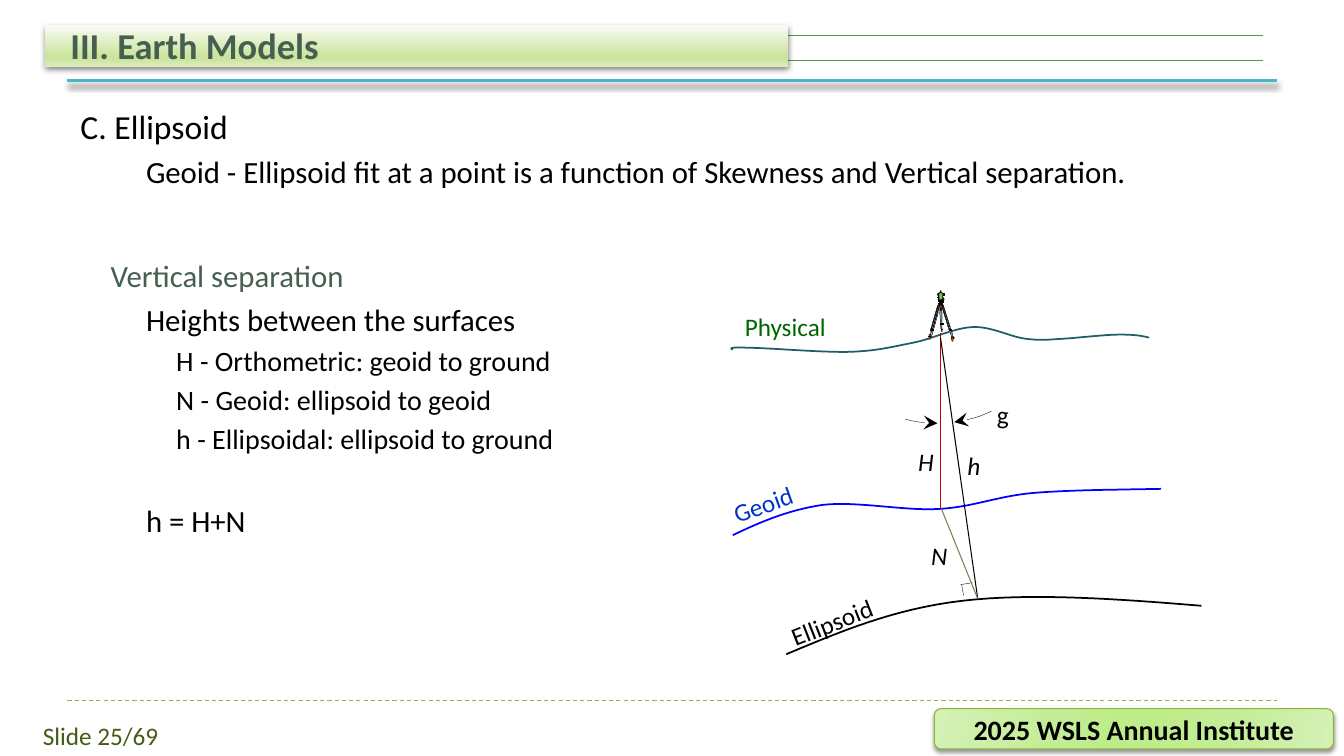
from dataclasses import dataclass

from lxml.etree import SubElement
from pptx import Presentation
from pptx.dml.color import RGBColor
from pptx.enum.dml import MSO_LINE
from pptx.enum.shapes import MSO_CONNECTOR, MSO_SHAPE
from pptx.enum.text import MSO_ANCHOR, PP_ALIGN
from pptx.oxml.ns import qn
from pptx.util import Pt


@dataclass(frozen=True)
class Theme:
    font = "Calibri"
    black, heading, footer = "000000", "455F51", "455C19"
    rule, accent, lime = "549E39", "4AB5C4", "8AB833"
    physical, geoid, ellipsoid = "215D66", "0000FF", "000000"
    physical_label, geoid_label = "006600", "0033CC"
    height, undulation = "C00000", "887952"
    steel = ((0, "717171"), (50, "A1A1A1"), (100, "BFBFBF"))
    orange = ((0, "973C00"), (50, "D75600"), (100, "FF6600"))
    title_bar = ((0, "F9FCF4"), (74, "CCE49E"), (83, "CCE49E"), (100, "DDEDBE"))
    badge = ((0, "D5F1B8"), (30, "C4ED97"), (45, "BEEC8A"),
             (55, "BEEC8A"), (73, "C4ED97"), (100, "D5F1B8"))
    dark, charcoal, gray, silver = "595959", "262626", "808080", "D9D9D9"
    green, bright, rust, knob = "008000", "92D050", "993300", "A6A6A6"
    title_size, topic_size, body_size, detail_size, label_size = 26, 24, 22, 20, 18


THEME = Theme()


def paint(shape, fill=None, line=None, width=0.25, angle=90):
    """Fill with a colour or with gradient stops, and set the outline."""
    shape.shadow.inherit = False
    if fill is None:
        shape.fill.background()
    elif isinstance(fill, str):
        shape.fill.solid()
        shape.fill.fore_color.rgb = RGBColor.from_string(fill)
    else:
        shape.fill.gradient()
        shape.fill.gradient_angle = (360 - angle) % 360
        stops = shape._element.spPr.find(".//" + qn("a:gsLst"))
        for stop in list(stops):
            stops.remove(stop)
        for position, color in fill:
            stop = SubElement(stops, qn("a:gs"), pos=str(position * 1000))
            SubElement(stop, qn("a:srgbClr"), val=color)
    if line:
        shape.line.color.rgb = RGBColor.from_string(line)
        shape.line.width = Pt(width)
    else:
        shape.line.fill.background()


def cast_shadow(shape, alpha, blur, distance):
    effects = shape._element.spPr.find(qn("a:effectLst"))
    shadow = SubElement(effects, qn("a:outerShdw"), blurRad=str(Pt(blur)), dist=str(Pt(distance)),
                        dir="5400000", algn="t", rotWithShape="0")
    color = SubElement(shadow, qn("a:srgbClr"), val=THEME.black)
    SubElement(color, qn("a:alpha"), val=str(alpha * 1000))


def add_preset(shapes, kind, left, top, width, height, rotation=0):
    shape = shapes.add_shape(kind, Pt(left), Pt(top), Pt(width), Pt(height))
    shape.rotation = rotation
    return shape


def add_line(shapes, start, end, color, width=0.75):
    line = shapes.add_connector(MSO_CONNECTOR.STRAIGHT, *map(Pt, start + end))
    line.line.color.rgb = RGBColor.from_string(color)
    line.line.width = Pt(width)
    SubElement(line._element.spPr, qn("a:effectLst"))
    return line


def add_outline(shapes, points, close):
    points = [(Pt(x), Pt(y)) for x, y in points]
    builder = shapes.build_freeform(*points[0])
    builder.add_line_segments(points[1:], close=close)
    return builder.convert_to_shape()


def format_text(para, size, color, bold=False, italic=False):
    for span in para.runs:
        font = span.font
        font.name, font.size, font.bold, font.italic = THEME.font, Pt(size), bold, italic
        font.color.rgb = RGBColor.from_string(color)


def add_text(page, box, text, size, color, bold=False, italic=False, wrap=True,
             anchor=MSO_ANCHOR.TOP, align=PP_ALIGN.LEFT):
    shape = page.shapes.add_textbox(*map(Pt, box))
    frame = shape.text_frame
    frame.text, frame.word_wrap, frame.vertical_anchor = text, wrap, anchor
    frame.paragraphs[0].alignment = align
    format_text(frame.paragraphs[0], size, color, bold, italic)
    return shape


def add_outline_text(page, box, rows):
    """Rows hold text, level, size, colour and space before."""
    frame = page.shapes.add_textbox(*map(Pt, box)).text_frame
    frame.word_wrap = True
    for index, (text, level, size, color, space) in enumerate(rows):
        para = frame.add_paragraph() if index else frame.paragraphs[0]
        para.text, para.level, para.space_before = text, level, Pt(space)
        properties = para._p.get_or_add_pPr()
        properties.set("marL", str(Pt(21.6 * (level + 1))))
        properties.set("indent", str(-Pt(21.6 if level < 2 else 18)))
        format_text(para, size, color)


def add_header(page, left, top, width, title):
    for y in (7.2, 25.2):
        add_line(page.shapes, (left + 20, top + y), (left + width - 10, top + y), THEME.rule)
    accent = add_line(page.shapes, (left + 15.8, top + 39.6), (left + width, top + 39.6),
                      THEME.accent, 2)
    cast_shadow(accent, 40, 4, 3.4)
    bar = add_preset(page.shapes, MSO_SHAPE.RECTANGLE, left, top, 530.6, 29.5)
    paint(bar, THEME.title_bar)
    cast_shadow(bar, 50, 4, 2)
    add_text(page, (left + 10.8, top - 3.6, 864, 36.7), title, THEME.title_size,
             THEME.heading, bold=True, anchor=MSO_ANCHOR.BOTTOM)


def add_footer(page, left, top, width, number, event):
    line = add_line(page.shapes, (left, top), (left + width, top), THEME.lime)
    line.line.dash_style = MSO_LINE.DASH
    badge = add_preset(page.shapes, MSO_SHAPE.ROUNDED_RECTANGLE,
                       left + 619.2, top + 5.8, 285.1, 28.8)
    paint(badge, THEME.badge, THEME.lime, 0.75, angle=16)
    cast_shadow(badge, 40, 3, 2)
    badge.text_frame.text = event
    badge.text_frame.vertical_anchor = MSO_ANCHOR.MIDDLE
    para = badge.text_frame.paragraphs[0]
    para.alignment = PP_ALIGN.CENTER
    format_text(para, THEME.detail_size, THEME.black, bold=True)
    add_text(page, (left - 42.6, top + 10.8, 132.5, 28.8), number, THEME.label_size,
             THEME.footer, align=PP_ALIGN.CENTER)


def bezier(points, steps=16):
    """Points along a chain of cubic curves that share their ends."""
    track = [points[0]]
    for first in range(0, len(points) - 1, 3):
        a, b, c, d = points[first:first + 4]
        for t in (step / steps for step in range(1, steps + 1)):
            u = 1 - t
            track.append(tuple(u**3 * p + 3 * u * u * t * q + 3 * u * t * t * r + t**3 * s
                               for p, q, r, s in zip(a, b, c, d)))
    return track


def add_tripod(page, left, top, unit=0.72):
    """Survey instrument on its tripod, laid out on a grid of small units."""
    shapes = page.shapes.add_group_shape().shapes
    slant, trapezoid = MSO_SHAPE.PARALLELOGRAM, MSO_SHAPE.TRAPEZOID
    block, oval, rounded = MSO_SHAPE.RECTANGLE, MSO_SHAPE.OVAL, MSO_SHAPE.ROUNDED_RECTANGLE
    t = THEME

    def place(kind, x, y, width, height, rotation, fill, line_width):
        shape = add_preset(shapes, kind, left + x * unit, top + y * unit,
                           width * unit, height * unit, rotation)
        paint(shape, fill, t.black, line_width)

    for x, y, width, height, turn in (
            (5, 21, 2, 25, 14.4), (7, 15, 1, 25, 15.4), (6, 14, 1, 25, 15.4),
            (20, 23, 2, 25, 341.5), (18, 14, 1, 25, 342.4), (17, 14, 1, 25, 342.4),
            (12, 16, 1, 18, 356.1), (13, 15, 1, 18, 359)):
        place(slant, x, y, width, height, turn, t.steel, 0.25)
    place(trapezoid, 12, 21, 2, 17, 178, t.steel, 0.25)
    for fill, points in (
            (t.orange, ((23, 46), (24, 46), (25, 45), (25, 50), (24, 50))),
            (t.orange, ((25, 46), (26, 46), (26, 47), (24, 47))),
            (t.rust, ((25, 47), (25, 48), (26, 47))),
            (t.orange, ((13, 38), (15, 38), (14, 39), (14, 41), (13, 39))),
            (t.orange, ((2, 43), (3, 44), (2, 48), (1, 48), (1, 44))),
            (t.orange, ((0, 45), (2, 45), (2, 45.5), (0, 45.5))),
            (t.rust, ((2, 45), (1, 46), (0, 45))),
            (t.dark, ((3, 38), (3, 40), (2, 40))),
            (t.dark, ((3, 38), (5, 38), (5, 39), (3, 39))),
            (t.dark, ((12, 32), (15, 32), (15, 33), (12, 33))),
            (t.orange, ((11, 16), (14, 16), (14, 13), (11, 14))),
            (t.orange, ((14, 15), (15, 15), (15, 14), (14, 13), (13, 13))),
            (t.orange, ((10, 15), (10, 14), (11, 13), (12, 13), (12, 15))),
            (t.dark, ((21, 38), (23, 38), (23, 39), (21, 39))),
            (t.dark, ((22, 38), (23, 38), (24, 40), (23, 40)))):
        paint(add_outline(shapes, [(left + x * unit, top + y * unit) for x, y in points], True),
              fill, t.black)
    place(block, 11, 13, 3, 1, 0, t.orange, 0.25)
    for kind, x, y, width, height, turn, fill in (
            (block, 10, 3, 6, 2, 0, t.green), (trapezoid, 9, 3, 2, 1, 270, t.charcoal),
            (oval, 10, 2, 5, 4, 0, t.bright), (trapezoid, 10, 7, 6, 2, 0, t.green),
            (trapezoid, 12, 0, 1, 2, 0, t.green), (block, 10, 12, 4, 1, 0, t.green),
            (trapezoid, 11, 10, 4, 1, 180, t.gray), (block, 10, 10, 5, 1, 0, t.charcoal),
            (rounded, 11, 2, 3, 7, 0, t.bright), (oval, 10, 8, 1, 1, 0, t.knob)):
        place(kind, x, y, width, height, turn, fill, 0.5)
    for x, y, turn in ((13, 11, 0), (11, 11, 0), (14, 11, 0), (10, 6, 270)):
        place(block, x, y, 0.4, 1, turn, t.silver, 0.5)
        place(block, x, y, 1, 0.4, turn, t.gray, 0.5)


def add_surfaces_diagram(page, left, top):
    shapes, t = page.shapes, THEME

    def at(x, y):
        return left + x, top + y

    for color, points in (
            (t.geoid, ((7.4, 175.3), (26.9, 166), (47, 157.3), (71.5, 153.7), (96, 150.8),
                       (129.1, 158), (154.3, 156.6), (179.5, 155.2), (196.8, 147.2),
                       (222.7, 145.1), (249.4, 142.9), (281, 142.9), (313.4, 142.2))),
            (t.physical, ((7.4, 42.8), (6, 42.1), (3.8, 40.7), (18.2, 41.4), (31.9, 41.4),
                          (72.2, 45), (91.7, 44.3), (111.1, 43.6), (121.2, 40.7), (136.3, 37.8),
                          (150.7, 34.9), (165.8, 27), (179.5, 26.6), (192.5, 26.3),
                          (205.4, 33.5), (216.2, 34.9), (227, 36.4), (232.8, 35.6),
                          (244.3, 34.9), (255.1, 34.2), (273.8, 32), (283.9, 32), (294, 32),
                          (299.8, 32.8), (304.8, 34.2))),
            (t.ellipsoid, ((45.6, 260.3), (83.8, 244.4), (121.9, 227.9), (171.6, 222.1),
                           (220.6, 216.4), (281.8, 220.7), (342.2, 225.7)))):
        paint(add_outline(shapes, [at(*point) for point in bezier(points)], False),
              None, color, 1.25)
    for start, end, color, width in (
            ((155.8, 156.6), (155.8, 30.6), t.height, 0.75),
            ((182.4, 220.7), (155.8, 34.2), t.black, 0.75),
            ((172.3, 218.5), (170.9, 210.6), t.black, 0.25),
            ((170.2, 210.6), (178.8, 209.2), t.black, 0.25),
            ((156.5, 156.6), (182.4, 220.7), t.undulation, 0.75)):
        add_line(shapes, at(*start), at(*end), color, width)
    add_tripod(page, *at(146.9, 0.7))
    for start, end, tip in ((53.97, 62.88, "a:headEnd"), (38.76, 49.37, "a:tailEnd")):
        arc = add_preset(shapes, MSO_SHAPE.ARC, *at(63.6, -84.6), 180, 180)
        arc.adjustments[0], arc.adjustments[1] = start, end
        paint(arc, None, t.black, 0.25)
        SubElement(arc.line._get_or_add_ln(), qn(tip), type="stealth", w="lg", len="lg")
    for text, x, y, width, turn, color in (
            ("Physical", 8.9, 11.9, 72.7, 0, t.physical_label),
            ("Geoid", 0.2, 138.6, 58.3, 340.5, t.geoid_label),
            ("Ellipsoid", 40.6, 222.8, 75.6, 338.7, t.black),
            ("g", 188.9, 74.5, 27.4, 0, t.black), ("h", 168, 111.2, 23.8, 0, t.black),
            ("N", 142.1, 175.3, 25.9, 0, t.black), ("H", 132.7, 108.4, 25.9, 0, t.black)):
        label = add_text(page, (*at(x, y), width, 28.8), text, t.label_size, color,
                         italic=text in ("h", "N", "H"), wrap=False)
        label.rotation = turn


def main():
    deck = Presentation()
    deck.slide_width, deck.slide_height = Pt(960), Pt(540)
    page = deck.slides.add_slide(deck.slide_layouts[6])
    t = THEME
    add_header(page, 32.4, 18, 879.8, "III. Earth Models")
    add_footer(page, 48.2, 500.4, 864, "Slide 25/69", "2025 WSLS Annual Institute")
    add_outline_text(page, (50.4, 72, 867.6, 95), (
        ("C. Ellipsoid", 0, t.topic_size, t.black, 0),
        ("Geoid - Ellipsoid fit at a point is a function of Skewness and Vertical separation.",
         2, t.body_size, t.black, 5)))
    add_outline_text(page, (50.4, 180, 421.2, 318.2), (
        ("Vertical separation", 1, t.body_size, t.heading, 0),
        ("Heights between the surfaces", 2, t.body_size, t.black, 5),
        ("H - Orthometric: geoid to ground", 3, t.detail_size, t.black, 4),
        ("N - Geoid: ellipsoid to geoid", 3, t.detail_size, t.black, 4),
        ("h - Ellipsoidal: ellipsoid to ground", 3, t.detail_size, t.black, 4),
        ("h = H+N", 2, t.body_size, t.black, 33)))
    add_surfaces_diagram(page, 516, 207)
    deck.save("out.pptx")


if __name__ == "__main__":
    main()
